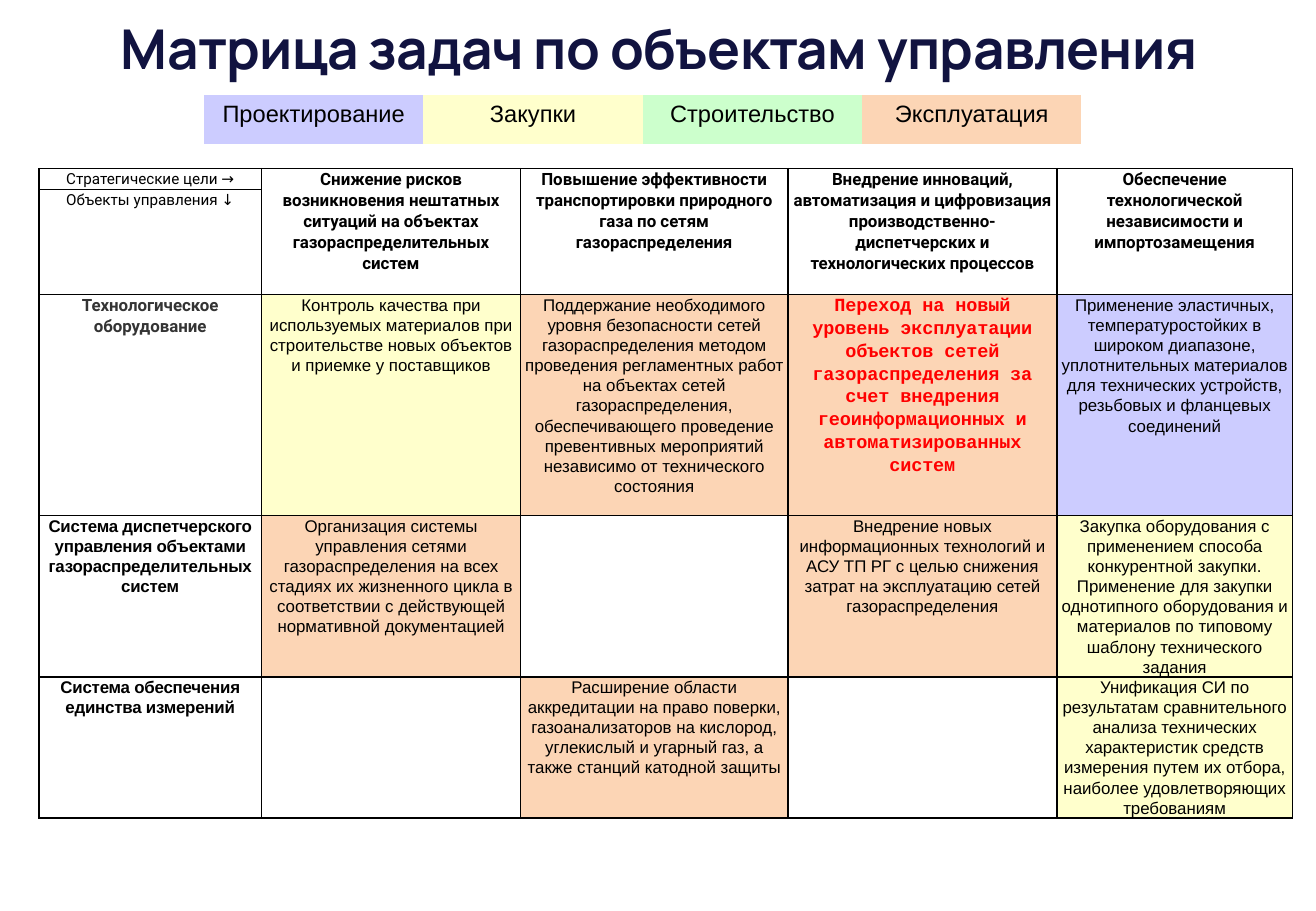
from dataclasses import dataclass

import lxml.etree
import pptx
import pptx.dml.color
import pptx.enum.text
import pptx.oxml.ns
import pptx.util

Pt = pptx.util.Pt


@dataclass(frozen=True)
class TextStyle:
    """Look of one kind of text; tracking is in points."""
    font: str
    size: float
    color: str
    bold: bool = False
    tracking: float = 0


class Theme:
    """Colours and type styles of the slide."""
    white = "FFFFFF"
    line = "000000"
    design = "CCCCFF"
    purchase = "FFFFCC"
    construction = "CCFFCC"
    operation = "FCD5B5"

    title = TextStyle("Manrope", 32.5, "111340", True, -0.4)
    legend = TextStyle("Arial", 14, "000000")
    corner = TextStyle("Roboto", 9, "000000")
    goal = TextStyle("Roboto", 10, "000000", True)
    equipment = TextStyle("Roboto", 10, "343434", True)
    system = TextStyle("Arial", 10, "000000", True, -0.1)
    task = TextStyle("Arial", 10, "000000")
    accent = TextStyle("Courier New", 11, "FF0000", True, -0.1)


LEGEND = [
    ("Проектирование", Theme.design),
    ("Закупки", Theme.purchase),
    ("Строительство", Theme.construction),
    ("Эксплуатация", Theme.operation),
]

GOALS = [
    "Снижение рисков возникновения нештатных ситуаций на объектах "
    "газораспределительных систем",
    "Повышение эффективности транспортировки природного газа по сетям "
    "газораспределения",
    "Внедрение инноваций, автоматизация и цифровизация "
    "производственно-диспетчерских и технологических процессов",
    "Обеспечение технологической независимости и импортозамещения",
]

OBJECTS = [
    ("Технологическое оборудование", Theme.equipment),
    ("Система диспетчерского управления объектами "
     "газораспределительных систем", Theme.system),
    ("Система обеспечения единства измерений", Theme.system),
]

# One row per object, one entry per goal: text and stage colour.
TASKS = [
    [
        ("Контроль качества при используемых материалов при строительстве "
         "новых объектов и приемке у поставщиков", Theme.purchase),
        ("Поддержание необходимого уровня безопасности сетей "
         "газораспределения методом проведения регламентных работ на "
         "объектах сетей газораспределения, обеспечивающего проведение "
         "превентивных мероприятий независимо от технического состояния",
         Theme.operation),
        ("Переход на новый уровень эксплуатации объектов сетей "
         "газораспределения за счет внедрения геоинформационных и "
         "автоматизированных систем", Theme.operation),
        ("Применение эластичных, температуростойких в широком диапазоне, "
         "уплотнительных материалов для технических устройств, резьбовых "
         "и фланцевых соединений", Theme.design),
    ],
    [
        ("Организация системы управления сетями газораспределения на всех "
         "стадиях их жизненного цикла в соответствии с действующей "
         "нормативной документацией", Theme.operation),
        None,
        ("Внедрение новых информационных технологий и АСУ ТП РГ с целью "
         "снижения затрат на эксплуатацию сетей газораспределения",
         Theme.operation),
        ("Закупка оборудования с применением способа конкурентной закупки. "
         "Применение для закупки однотипного оборудования и материалов по "
         "типовому шаблону технического задания", Theme.purchase),
    ],
    [
        None,
        ("Расширение области аккредитации на право поверки, "
         "газоанализаторов на кислород, углекислый и угарный газ, а также "
         "станций катодной защиты", Theme.operation),
        None,
        ("Унификация СИ по результатам сравнительного анализа технических "
         "характеристик средств измерения путем их отбора, наиболее "
         "удовлетворяющих требованиям", Theme.purchase),
    ],
]
ACCENT_TASK = (0, 2)


def write(tf, text, style, spacing=None):
    """Put one centred paragraph in a text frame."""
    tf.text = text
    p = tf.paragraphs[0]
    p.alignment = pptx.enum.text.PP_ALIGN.CENTER
    p.line_spacing = spacing
    for r in p.runs:
        r.font.name = style.font
        r.font.size = Pt(style.size)
        r.font.bold = style.bold
        r.font.color.rgb = pptx.dml.color.RGBColor.from_string(style.color)
        if style.tracking:
            r.font._element.set("spc", str(round(style.tracking * 100)))


def set_borders(cell, color=None):
    """Draw 1 pt lines round a cell, or none without a colour."""
    qn = pptx.oxml.ns.qn
    tcPr = cell._tc.get_or_add_tcPr()
    for i, side in enumerate(("a:lnL", "a:lnR", "a:lnT", "a:lnB")):
        ln = lxml.etree.Element(qn(side), w=str(Pt(1)))
        if color:
            fill = lxml.etree.SubElement(ln, qn("a:solidFill"))
            lxml.etree.SubElement(fill, qn("a:srgbClr"), val=color)
        else:
            lxml.etree.SubElement(ln, qn("a:noFill"))
        tcPr.insert(i, ln)


def add_grid(s, left, top, widths, heights, line=None):
    """Add a plain white table with the given columns and rows."""
    table = s.shapes.add_table(len(heights), len(widths), Pt(left), Pt(top),
                               Pt(sum(widths)), Pt(sum(heights))).table
    table.first_row = table.horz_banding = False
    for column, width in zip(table.columns, widths):
        column.width = Pt(width)
    for row, height in zip(table.rows, heights):
        row.height = Pt(height)
    for cell in table.iter_cells():
        fill_cell(cell, Theme.white)
        set_borders(cell, line)
    return table


def fill_cell(cell, color):
    """Give a cell a solid fill."""
    cell.fill.solid()
    cell.fill.fore_color.rgb = pptx.dml.color.RGBColor.from_string(color)


def write_matrix_cell(cell, text, style, color=Theme.white):
    """Fill a matrix cell and set its text with narrow margins."""
    fill_cell(cell, color)
    cell.margin_left = cell.margin_right = Pt(2)
    cell.margin_top = cell.margin_bottom = 0
    write(cell.text_frame, text, style, 1.07)


def add_title(s, text):
    """Place the slide title."""
    sp = s.shapes.title
    sp.left, sp.top, sp.width, sp.height = Pt(23), Pt(13), Pt(735), Pt(29)
    tf = sp.text_frame
    tf.margin_left = tf.margin_right = tf.margin_top = tf.margin_bottom = 0
    tf.vertical_anchor = pptx.enum.text.MSO_ANCHOR.TOP
    tf.auto_size = pptx.enum.text.MSO_AUTO_SIZE.NONE
    tf.word_wrap = True
    write(tf, text, Theme.title, 0.9)


def add_legend(s):
    """Add the strip that explains the stage colours."""
    table = add_grid(s, 121, 56.5, [130] * len(LEGEND), [29])
    for cell, (text, color) in zip(table.iter_cells(), LEGEND):
        fill_cell(cell, color)
        write(cell.text_frame, text, Theme.legend)


def add_matrix(s):
    """Add the matrix of objects against strategic goals."""
    table = add_grid(s, 23, 100, [132, 153.5, 158.5, 159.5, 139.5],
                     [12.5, 62, 131, 95.5, 83.5], Theme.line)
    write_matrix_cell(table.cell(0, 0), "Стратегические цели →", Theme.corner)
    write_matrix_cell(table.cell(1, 0), "Объекты управления ↓", Theme.corner)
    for col, goal in enumerate(GOALS, 1):
        cell = table.cell(0, col)
        cell.merge(table.cell(1, col))
        write_matrix_cell(cell, goal, Theme.goal)
    for i, ((name, style), tasks) in enumerate(zip(OBJECTS, TASKS)):
        write_matrix_cell(table.cell(i + 2, 0), name, style)
        for j, task in enumerate(tasks):
            if task:
                text, color = task
                style = Theme.accent if (i, j) == ACCENT_TASK else Theme.task
                write_matrix_cell(table.cell(i + 2, j + 1), text, style, color)


def main():
    """Build the slide and save it."""
    prs = pptx.Presentation()
    prs.slide_width, prs.slide_height = Pt(780), Pt(540)
    s = prs.slides.add_slide(prs.slide_layouts[5])
    add_matrix(s)
    add_title(s, "Матрица задач по объектам управления")
    add_legend(s)
    prs.save("out.pptx")


main()
